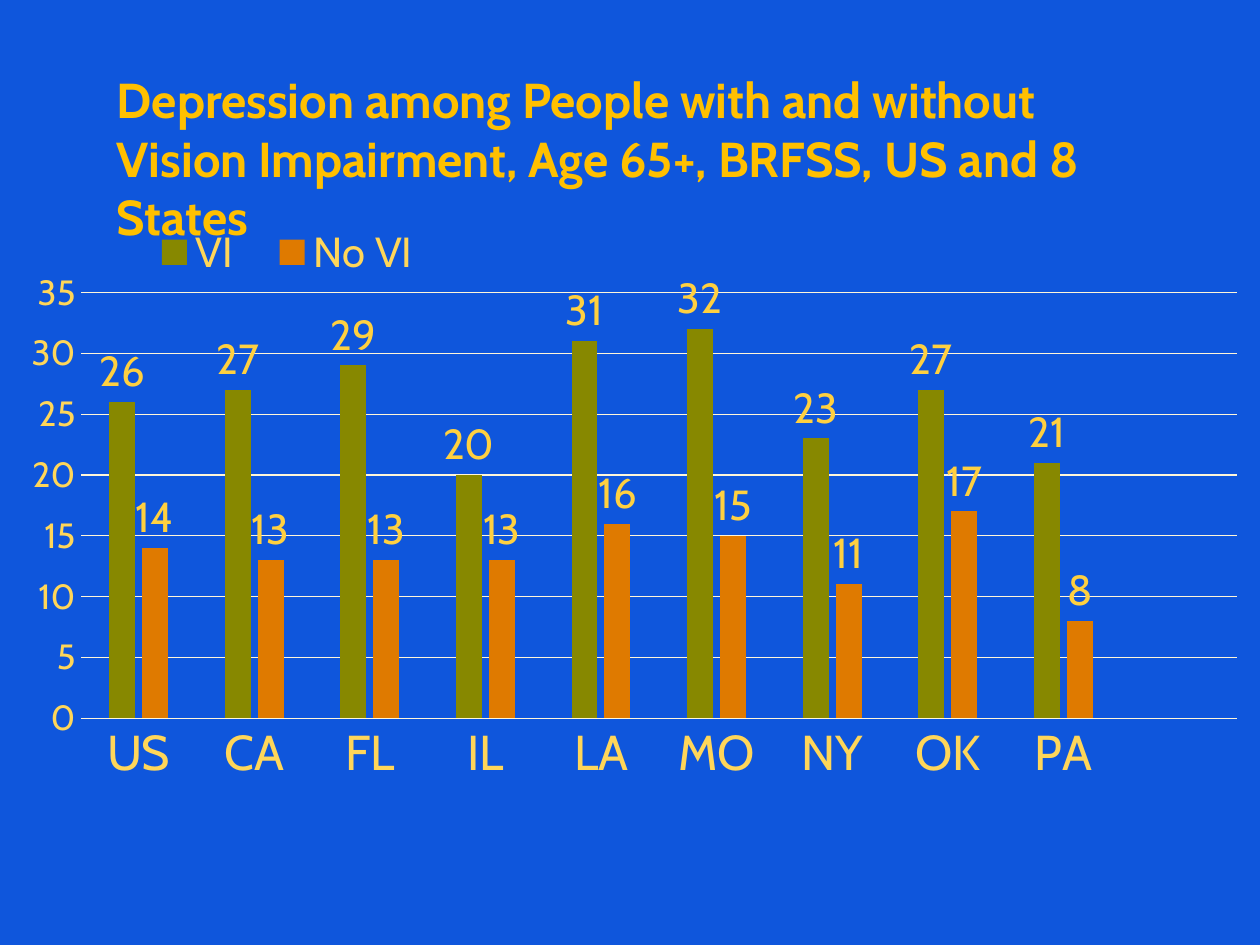
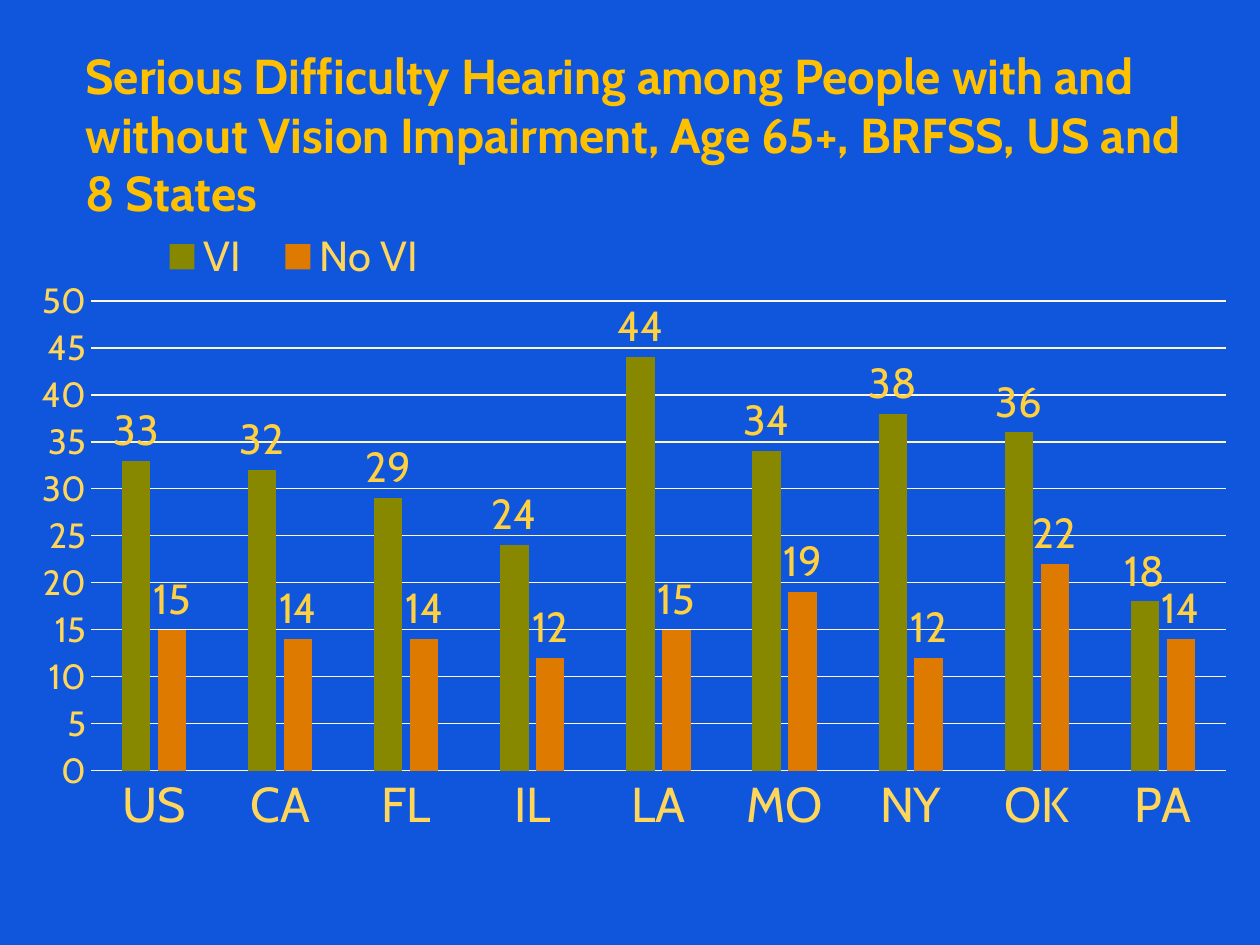
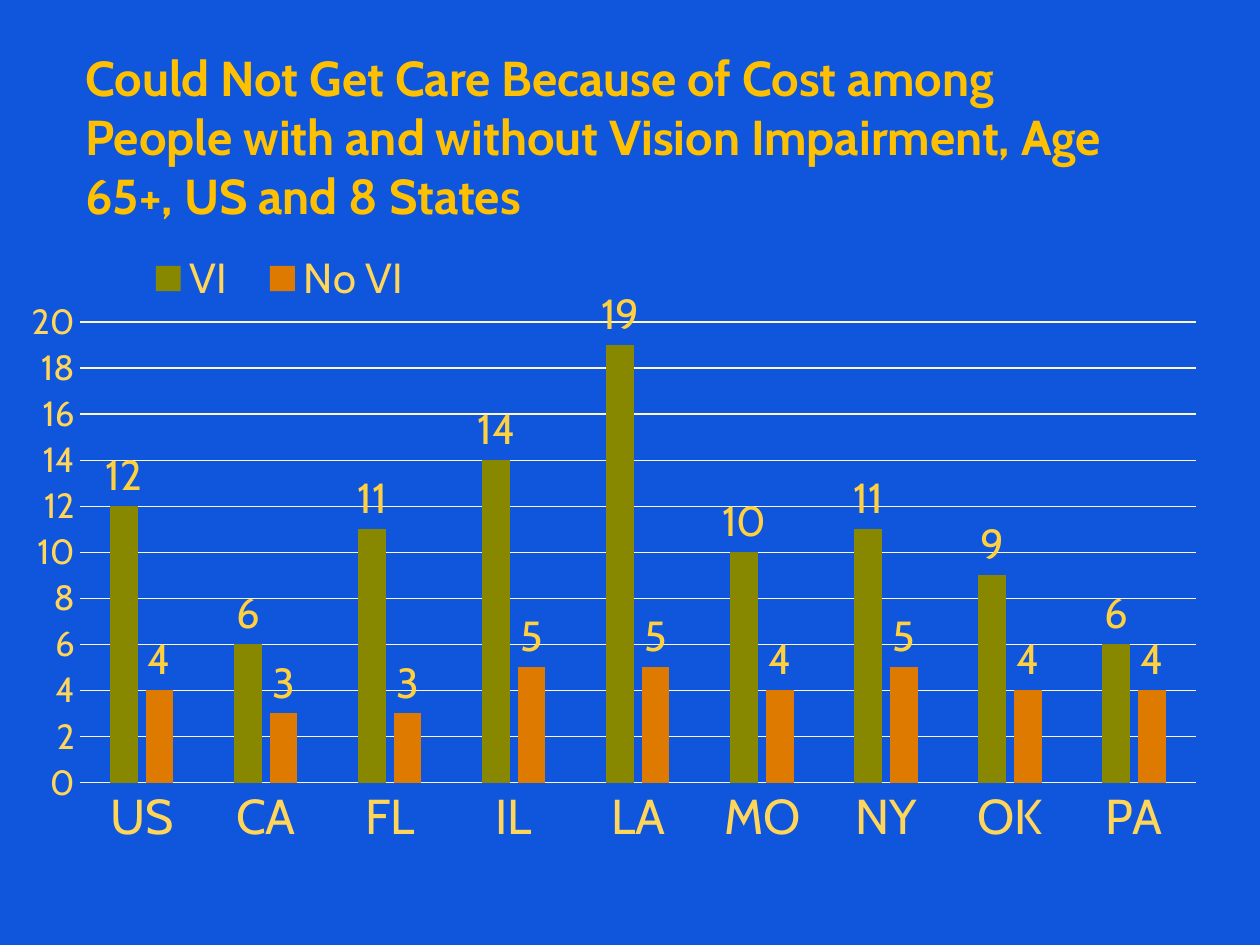
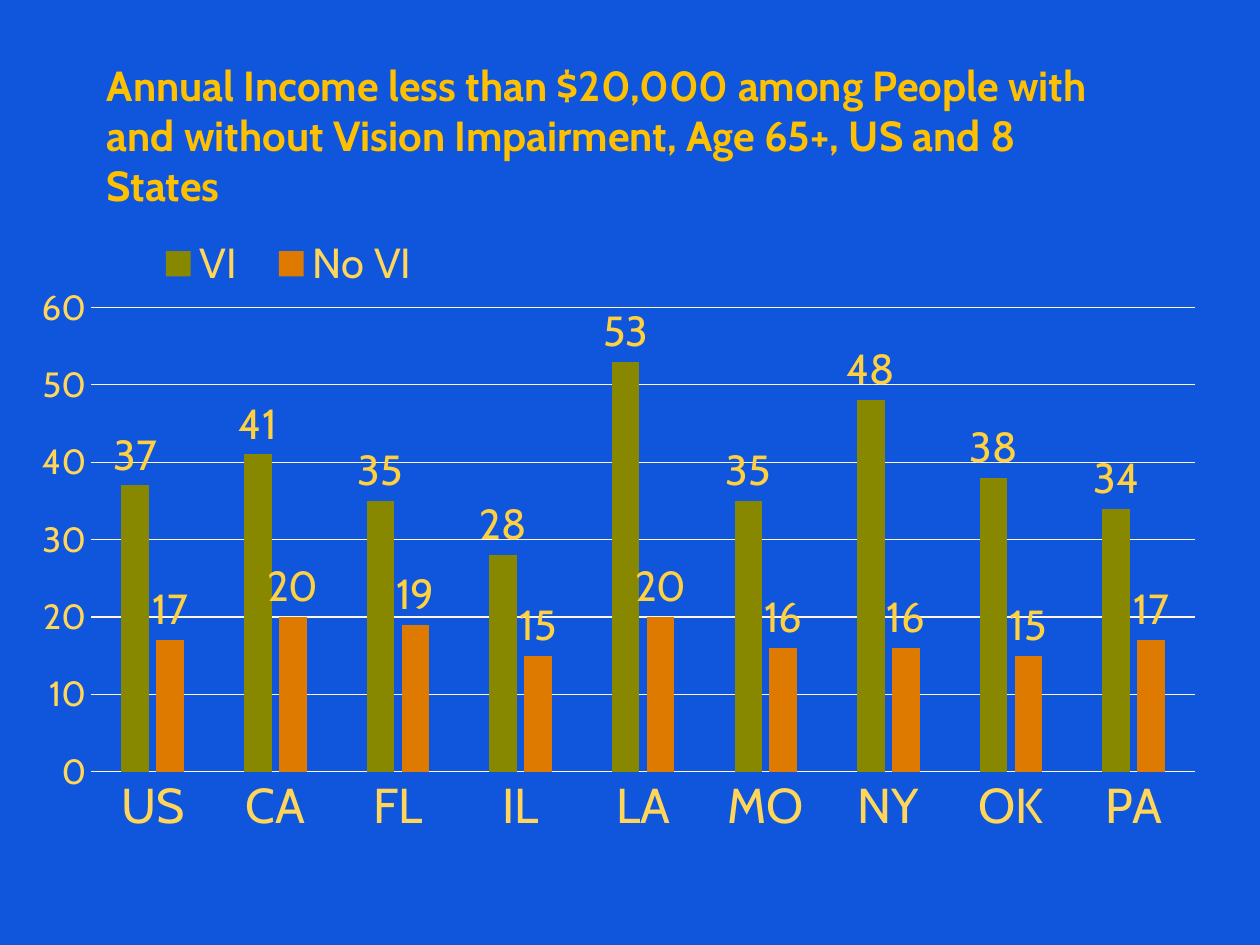
from lxml.etree import SubElement
from pptx import Presentation
from pptx.chart.data import CategoryChartData
from pptx.dml.color import RGBColor
from pptx.enum.chart import XL_CHART_TYPE, XL_LABEL_POSITION, XL_LEGEND_POSITION, XL_TICK_MARK
from pptx.enum.text import MSO_AUTO_SIZE
from pptx.oxml.ns import qn
from pptx.util import Inches, Pt

FONT = "Cabin"
COLORS = {
    "background": "0F56DC",
    "title": "FFC000",
    "axis_text": "FFD659",
    "label": "FFD040",
    "line": "FFF6D9",
    "VI": "878800",
    "No VI": "DF7A00",
}
STATES = ["US", "CA", "FL", "IL", "LA", "MO", "NY", "OK", "PA"]
PLOT_AREA = {"x": 0.03, "y": 0.137, "w": 0.951, "h": 0.71}
LEGEND_AREA = {"x": 0.07, "y": 0.02, "w": 0.26, "h": 0.1}

SLIDES = [
    {
        "title": "Depression among People with and without Vision Impairment, "
                 "Age 65+, BRFSS, US and 8 States",
        "title_box": (0.83, 0.5, 8.11, 1.51), "title_size": 28,
        "chart_box": (0.25, 1.67, 9.75, 4.76), "maximum": 35, "step": 5,
        "states": STATES + [""],
        "VI": [26, 27, 29, 20, 31, 32, 23, 27, 21, None],
        "No VI": [14, 13, 13, 13, 16, 15, 11, 17, 8, None],
    },
    {
        "title": "Serious Difficulty Hearing among People with and without Vision Impairment, "
                 "Age 65+, BRFSS, US and 8 States",
        "title_box": (0.58, 0.31, 9.08, 1.51), "title_size": 28,
        "chart_box": (0.33, 1.67, 9.58, 5.25), "maximum": 50, "step": 5,
        "states": STATES,
        "VI": [33, 32, 29, 24, 44, 34, 38, 36, 18],
        "No VI": [15, 14, 14, 12, 15, 19, 12, 22, 14],
    },
    {
        "title": "Could Not Get Care Because of Cost among People with and without "
                 "Vision Impairment, Age 65+, US and 8 States",
        "title_box": (0.58, 0.33, 8.36, 1.51), "title_size": 28,
        "chart_box": (0.25, 1.85, 9.42, 5.15), "maximum": 20, "step": 2,
        "states": STATES,
        "VI": [12, 6, 11, 14, 19, 10, 11, 9, 6],
        "No VI": [4, 3, 3, 5, 5, 4, 5, 4, 4],
    },
    {
        "title": "Annual Income less than $20,000 among People with and without "
                 "Vision Impairment, Age 65+, US and 8 States",
        "title_box": (0.75, 0.42, 8.25, 1.31), "title_size": 24,
        "chart_box": (0.33, 1.73, 9.33, 5.19), "maximum": 60, "step": 10,
        "states": STATES,
        "VI": [37, 41, 35, 28, 53, 35, 48, 38, 34],
        "No VI": [17, 20, 19, 15, 20, 16, 16, 15, 17],
    },
]


def add_text(slide, text, box, size, color, bold=False):
    shape = slide.shapes.add_textbox(*map(Inches, box))
    frame = shape.text_frame
    frame.word_wrap = True
    frame.auto_size = MSO_AUTO_SIZE.SHAPE_TO_FIT_TEXT
    run = frame.paragraphs[0].add_run()
    run.text = text
    run.font.name, run.font.size, run.font.bold = FONT, Pt(size), bold
    run.font.color.rgb = RGBColor.from_string(COLORS[color])


def set_layout(parent, index, area, inner=False):
    """Place a chart part by fractions of the chart's width and height."""
    for old_layout in parent.findall(qn("c:layout")):
        parent.remove(old_layout)
    layout = SubElement(parent, qn("c:layout"))
    parent.insert(index, layout)
    manual = SubElement(layout, qn("c:manualLayout"))
    settings = [("layoutTarget", "inner")] if inner else []
    settings += [("xMode", "edge"), ("yMode", "edge"), *area.items()]
    for name, value in settings:
        SubElement(manual, qn(f"c:{name}")).set("val", str(value))


presentation = Presentation()
presentation.slide_width = Inches(10)
presentation.slide_height = Inches(7.5)

for content in SLIDES:
    slide = presentation.slides.add_slide(presentation.slide_layouts[6])
    slide.background.fill.solid()
    slide.background.fill.fore_color.rgb = RGBColor.from_string(COLORS["background"])

    data = CategoryChartData()
    data.categories = content["states"]
    for name in ("VI", "No VI"):
        data.add_series(name, content[name])
    chart = slide.shapes.add_chart(
        XL_CHART_TYPE.COLUMN_CLUSTERED, *map(Inches, content["chart_box"]), data).chart
    chart.has_title = False
    chart.has_legend = True
    chart.legend.position = XL_LEGEND_POSITION.BOTTOM
    chart.legend.include_in_layout = False

    plot = chart.plots[0]
    plot.gap_width, plot.overlap = 219, -27
    plot.vary_by_categories = False
    fonts = [
        (chart.font, 10, "title"),
        (chart.legend.font, 24, "axis_text"),
        (chart.category_axis.tick_labels.font, 28, "axis_text"),
        (chart.value_axis.tick_labels.font, 20, "axis_text"),
    ]
    for series in plot.series:
        series.format.fill.solid()
        series.format.fill.fore_color.rgb = RGBColor.from_string(COLORS[series.name])
        series.invert_if_negative = False
        labels = series.data_labels
        labels.show_value = True
        labels.position = XL_LABEL_POSITION.OUTSIDE_END
        fonts.append((labels.font, 24, "label"))
    for font, size, color in fonts:
        font.name, font.size = FONT, Pt(size)
        font.color.rgb = RGBColor.from_string(COLORS[color])

    value_axis = chart.value_axis
    value_axis.minimum_scale, value_axis.maximum_scale = 0, content["maximum"]
    value_axis.major_unit = content["step"]
    value_axis.format.line.fill.background()
    for axis in (chart.category_axis, value_axis):
        axis.major_tick_mark = axis.minor_tick_mark = XL_TICK_MARK.NONE
    for line in (chart.category_axis.format.line, value_axis.major_gridlines.format.line):
        line.width = Pt(0.75)
        line.color.rgb = RGBColor.from_string(COLORS["line"])

    set_layout(chart.element.find(f".//{qn('c:plotArea')}"), 0, PLOT_AREA, inner=True)
    set_layout(chart.element.find(f".//{qn('c:legend')}"), 1, LEGEND_AREA)

    add_text(slide, content["title"], content["title_box"],
             size=content["title_size"], color="title", bold=True)

presentation.save("out.pptx")
